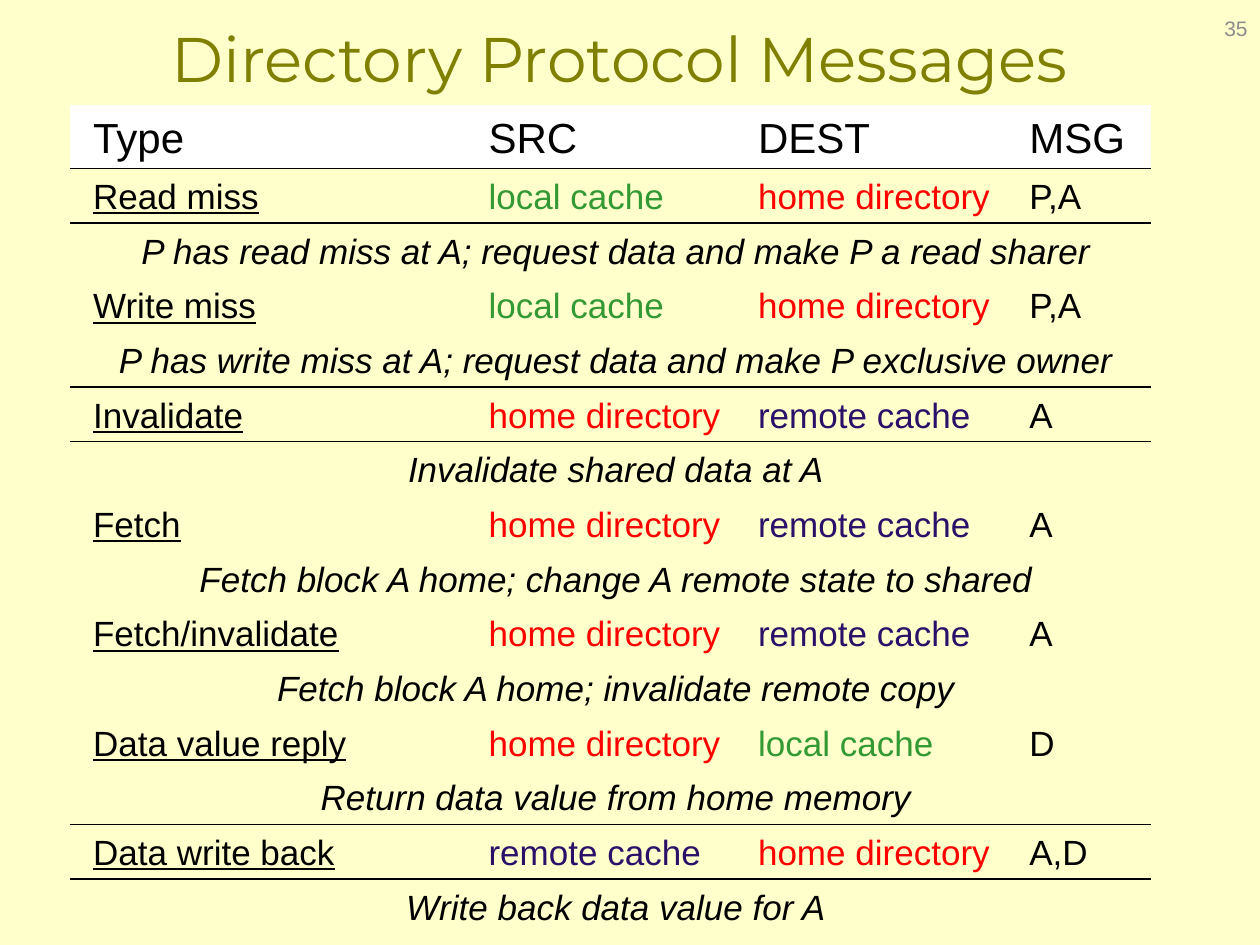
import dataclasses
import typing

import pptx
import pptx.dml.color
import pptx.enum.text
import pptx.oxml
import pptx.oxml.ns
import pptx.util

Pt = pptx.util.Pt
Align = pptx.enum.text.PP_ALIGN
Middle = pptx.enum.text.MSO_ANCHOR.MIDDLE


@dataclasses.dataclass(frozen=True)
class Theme:
    back: str = "FFFFCC"
    title: str = "808000"
    page: str = "8C8C8C"
    ink: str = "000000"
    head: str = "FFFFFF"
    local: str = "339933"
    home: str = "FF0000"
    remote: str = "2B1069"
    font: str = "Arial"
    title_font: str = "Montserrat"
    title_size: int = 36
    head_size: int = 24
    body_size: int = 20
    page_size: int = 12


class Message(typing.NamedTuple):
    kind: str
    source: str
    dest: str
    args: str
    note: str
    ruled: bool = False


THEME = Theme()
LOCAL, HOME, REMOTE = "local cache", "home directory", "remote cache"
COLORS = {LOCAL: THEME.local, HOME: THEME.home, REMOTE: THEME.remote}
HEADS = ("Type", "SRC", "DEST", "MSG")
MESSAGES = (
    Message("Read miss", LOCAL, HOME, "P,A",
            "P has read miss at A; request data and make P a read sharer"),
    Message("Write miss", LOCAL, HOME, "P,A",
            "P has write miss at A; request data and make P exclusive owner", True),
    Message("Invalidate", HOME, REMOTE, "A", "Invalidate shared data at A"),
    Message("Fetch", HOME, REMOTE, "A",
            "Fetch block A home; change A remote state to shared"),
    Message("Fetch/invalidate", HOME, REMOTE, "A",
            "Fetch block A home; invalidate remote copy"),
    Message("Data value reply", HOME, LOCAL, "D",
            "Return data value from home memory", True),
    Message("Data write back", REMOTE, HOME, "A,D", "Write back data value for A"),
)
WIDTHS = (226, 154, 155, 83)
HEAD_LINE, BODY_LINE = 29, 24
PAD = 7.2
NO_STYLE = "{2D5ABB26-0587-4C30-8999-92F81FD0307C}"


def write(frame, text: str, color: str, align=Align.LEFT, **form) -> typing.Any:
    """Put one formatted run in the frame and return its paragraph."""
    para = frame.paragraphs[0]
    para.alignment = align
    run = para.add_run()
    run.text = text
    run.font.color.rgb = pptx.dml.color.RGBColor.from_string(color)
    for key, value in form.items():
        setattr(run.font, key, value)
    return para


def fill_cell(cell, text: str, line: int, color: str = THEME.ink,
              align=Align.LEFT, **form) -> None:
    cell.vertical_anchor = Middle
    para = write(cell.text_frame, text, color, align, name=THEME.font, **form)
    para.line_spacing = Pt(line)
    para._p.get_or_add_pPr().set("marL", str(Pt(6)))


def rule_below(table, row: int) -> None:
    """Draw a line on the edge that a row shares with the next one."""
    for index, side in ((row, "lnB"), (row + 1, "lnT")):
        for cell in table.rows[index].cells:
            cell._tc.get_or_add_tcPr().insert(0, pptx.oxml.parse_xml(
                f'<a:{side} {pptx.oxml.ns.nsdecls("a")} w="{Pt(1)}"><a:solidFill>'
                f'<a:srgbClr val="{THEME.ink}"/></a:solidFill></a:{side}>'))


def add_grid(slide) -> typing.Any:
    """Add the plain table, sized but without text."""
    count = 1 + 2 * len(MESSAGES)
    heights = [HEAD_LINE + PAD] + [BODY_LINE + PAD] * (count - 1)
    frame = slide.shapes.add_table(count, len(WIDTHS), Pt(40), Pt(60),
                                   Pt(sum(WIDTHS)), Pt(sum(heights)))
    style = pptx.oxml.ns.qn("a:tableStyleId")
    next(frame.element.iter(style)).text = NO_STYLE
    table = frame.table
    table.first_row = table.horz_banding = False
    for column, width in zip(table.columns, WIDTHS):
        column.width = Pt(width)
    for row, height in zip(table.rows, heights):
        row.height = Pt(height)
    for cell in table.iter_cells():
        cell.fill.background()
    return table


def add_message(table, row: int, item: Message) -> None:
    for col, text in enumerate(item[:4]):
        fill_cell(table.cell(row, col), text, BODY_LINE,
                  COLORS.get(text, THEME.ink),
                  size=Pt(THEME.body_size), underline=col == 0)
    note = table.cell(row + 1, 0)
    note.merge(table.cell(row + 1, len(WIDTHS) - 1))
    fill_cell(note, item.note, BODY_LINE, align=Align.CENTER,
              size=Pt(THEME.body_size), italic=True)
    if item.ruled:
        rule_below(table, row + 1)


def add_table(slide) -> None:
    table = add_grid(slide)
    for cell, text in zip(table.rows[0].cells, HEADS):
        cell.fill.solid()
        cell.fill.fore_color.rgb = pptx.dml.color.RGBColor.from_string(THEME.head)
        fill_cell(cell, text, HEAD_LINE, size=Pt(THEME.head_size))
    rule_below(table, 0)
    for index, item in enumerate(MESSAGES):
        add_message(table, 1 + 2 * index, item)


def add_title(slide) -> None:
    title = slide.shapes.title
    place = {"left": 42, "top": -12, "width": 624, "height": 90}
    for key, value in place.items():
        setattr(title, key, Pt(value))
    title.text_frame.vertical_anchor = Middle
    write(title.text_frame, "Directory Protocol Messages", THEME.title,
          Align.CENTER, name=THEME.title_font, size=Pt(THEME.title_size))


def add_page(slide) -> None:
    frame = slide.shapes.add_textbox(Pt(552), Pt(1.5), Pt(168), Pt(29)).text_frame
    frame.word_wrap = True
    frame.vertical_anchor = Middle
    write(frame, "35", THEME.page, Align.RIGHT,
          name=THEME.font, size=Pt(THEME.page_size))


def main() -> None:
    deck = pptx.Presentation()
    deck.slide_width, deck.slide_height = Pt(720), Pt(540)
    slide = deck.slides.add_slide(deck.slide_layouts.get_by_name("Title Only"))
    back = slide.background.fill
    back.solid()
    back.fore_color.rgb = pptx.dml.color.RGBColor.from_string(THEME.back)
    add_table(slide)
    add_title(slide)
    add_page(slide)
    deck.save("out.pptx")


if __name__ == "__main__":
    main()
